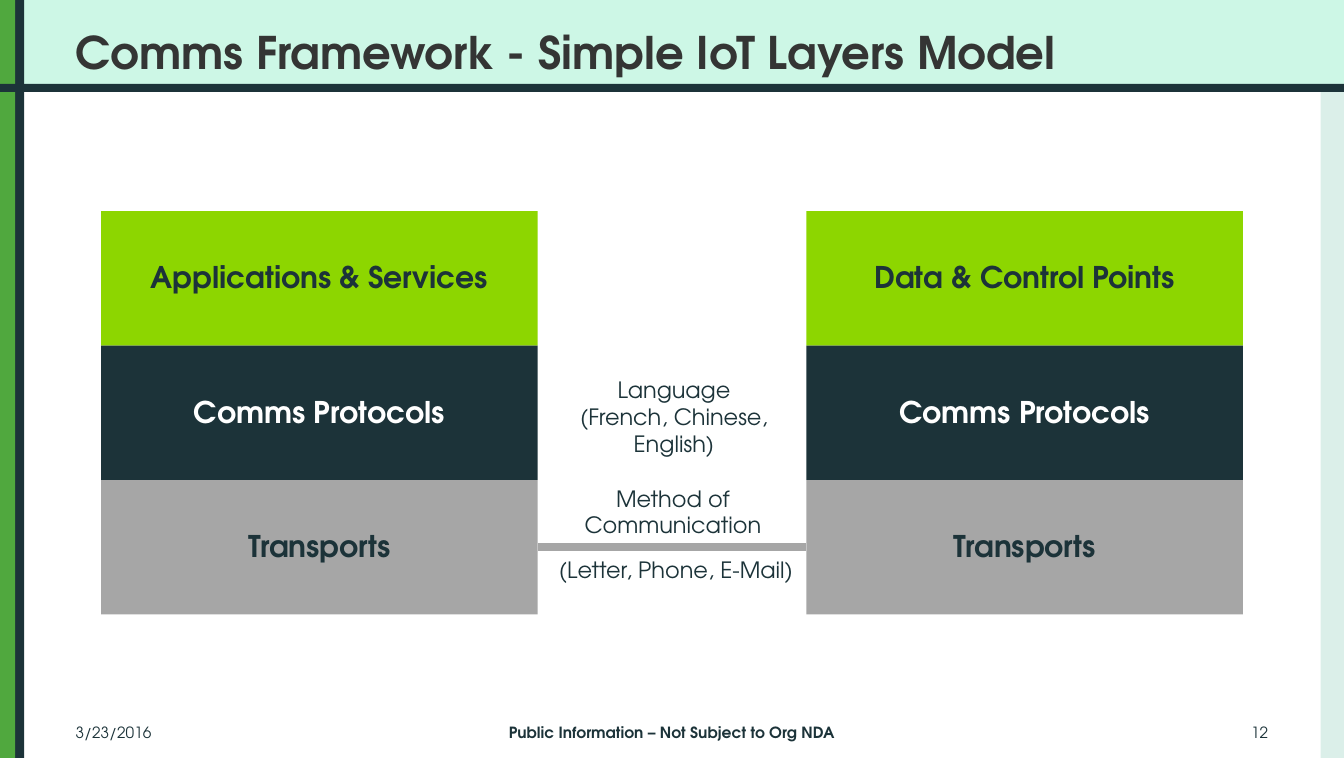
import pptx
import pptx.dml.color
import pptx.enum.shapes
import pptx.enum.text
import pptx.oxml.ns
import pptx.util
from lxml import etree

Inches = pptx.util.Inches
RGBColor = pptx.dml.color.RGBColor
Align = pptx.enum.text.PP_ALIGN
Anchor = pptx.enum.text.MSO_ANCHOR

FONT = "TeX Gyre Adventor"
NAVY = RGBColor(0x1C, 0x33, 0x39)
GREEN = RGBColor(0x50, 0xA8, 0x3E)
LIME = RGBColor(0x8D, 0xD6, 0x00)
GRAY = RGBColor(0xA6, 0xA6, 0xA6)
MINT = RGBColor(0xCD, 0xF7, 0xE6)
PALE_MINT = RGBColor(0xDB, 0xEF, 0xE9)
CHARCOAL = RGBColor(0x34, 0x35, 0x34)
WHITE = RGBColor(0xFF, 0xFF, 0xFF)

SLIDE_WIDTH, SLIDE_HEIGHT = 13.3, 7.5
HEADER_HEIGHT = 0.83
MARGIN = 0.65
LAYER_HEIGHT = 1.33


def write_text(shape, lines, size, color=NAVY, bold=False, align=Align.CENTER,
               anchor=Anchor.MIDDLE, inset=0.13, spacing=1.0):
    frame = shape.text_frame
    frame.word_wrap = True
    frame.vertical_anchor = anchor
    frame.margin_left = frame.margin_right = Inches(inset)
    frame.margin_top = frame.margin_bottom = Inches(inset / 2)
    for index, line in enumerate(lines):
        paragraph = frame.add_paragraph() if index else frame.paragraphs[0]
        paragraph.alignment = align
        paragraph.line_spacing = spacing
        run = paragraph.add_run()
        run.text = line
        run.font.name = FONT
        run.font.size = pptx.util.Pt(size)
        run.font.bold = bold
        run.font.color.rgb = color


def add_text(slide, box, lines, size, **style):
    shape = slide.shapes.add_textbox(*map(Inches, box))
    write_text(shape, lines, size, **style)


def add_block(slide, box, color):
    shape = slide.shapes.add_shape(
        pptx.enum.shapes.MSO_SHAPE.RECTANGLE, *map(Inches, box))
    shape.shadow.inherit = False
    shape.fill.solid()
    shape.fill.fore_color.rgb = color
    shape.line.fill.background()
    return shape


def add_frame(slide, width, height):
    body_height = height - HEADER_HEIGHT
    for box, color in (
        ((0.22, 0, width - 0.22, HEADER_HEIGHT), MINT),
        ((0.07, 0, 0.17, height), NAVY),
        ((0, 0, 0.15, height), GREEN),
        ((width - 0.23, HEADER_HEIGHT, 0.23, body_height), PALE_MINT),
        ((0, HEADER_HEIGHT, width, 0.08), NAVY),
    ):
        add_block(slide, box, color)


def add_title(slide, box, title):
    add_text(slide, box, [title], 32, color=CHARCOAL, bold=True,
             align=Align.LEFT, anchor=Anchor.BOTTOM, inset=0.1)


def add_stack(slide, left, top, width, top_label):
    layers = (
        (top_label, LIME, NAVY),
        ("Comms Protocols", NAVY, WHITE),
        ("Transports", GRAY, NAVY),
    )
    blocks = []
    for index, (label, fill, color) in enumerate(layers):
        box = (left, top + index * LAYER_HEIGHT, width, LAYER_HEIGHT)
        block = add_block(slide, box, fill)
        write_text(block, [label], 21.3, color=color, bold=True, spacing=0.95)
        blocks.append(block)
    return blocks


def add_link(slide, left_block, right_block):
    link = slide.shapes.add_connector(
        pptx.enum.shapes.MSO_CONNECTOR.STRAIGHT, 0, 0, 0, 0)
    link.begin_connect(left_block, 3)
    link.end_connect(right_block, 1)
    link.line.color.rgb = GRAY
    link.line.width = pptx.util.Pt(6)
    etree.SubElement(link._element.spPr, pptx.oxml.ns.qn("a:effectLst"))


def add_link_labels(slide, left, top, width):
    add_text(slide, (left - 0.09, top + 1.87, width + 0.22, 0.33),
             ["Language", "(French, Chinese, English)"], 16)
    add_text(slide, (left + 0.01, top + 2.82, width, 0.33),
             ["Method of Communication"], 16, spacing=0.95)
    add_text(slide, (left + 0.04, top + 3.39, width, 0.33),
             ["(Letter, Phone, E-Mail)"], 16, spacing=0.95)


def add_model(slide, left, top, width):
    stack_width = 4.32
    right_left = left + width - stack_width
    left_stack = add_stack(slide, left, top, stack_width, "Applications & Services")
    right_stack = add_stack(slide, right_left, top, stack_width, "Data & Control Points")
    add_link(slide, left_stack[-1], right_stack[-1])
    add_link_labels(slide, left + stack_width, top, width - 2 * stack_width)


def add_footer(slide, left, top, width, height):
    side_width, center_width = 1.5, 8
    center_left = left + (width - center_width) / 2
    for text, text_left, text_width, align, bold in (
        ("3/23/2016", left, side_width, Align.LEFT, False),
        ("Public Information – Not Subject to Org NDA",
         center_left, center_width, Align.CENTER, True),
        ("12", left + width - side_width, side_width, Align.RIGHT, False),
    ):
        add_text(slide, (text_left, top, text_width, height), [text], 11,
                 align=align, bold=bold, inset=0.1)


def main():
    presentation = pptx.Presentation()
    presentation.slide_width = Inches(SLIDE_WIDTH)
    presentation.slide_height = Inches(SLIDE_HEIGHT)
    slide = presentation.slides.add_slide(presentation.slide_layouts[6])
    content_width = SLIDE_WIDTH - 2 * MARGIN
    add_frame(slide, SLIDE_WIDTH, SLIDE_HEIGHT)
    add_title(slide, (MARGIN, 0.08, content_width, 0.75),
              "Comms Framework - Simple IoT Layers Model")
    add_model(slide, 1, 2.09, SLIDE_WIDTH - 2)
    add_footer(slide, MARGIN, 7.08, content_width, 0.33)
    presentation.save("out.pptx")


if __name__ == "__main__":
    main()
